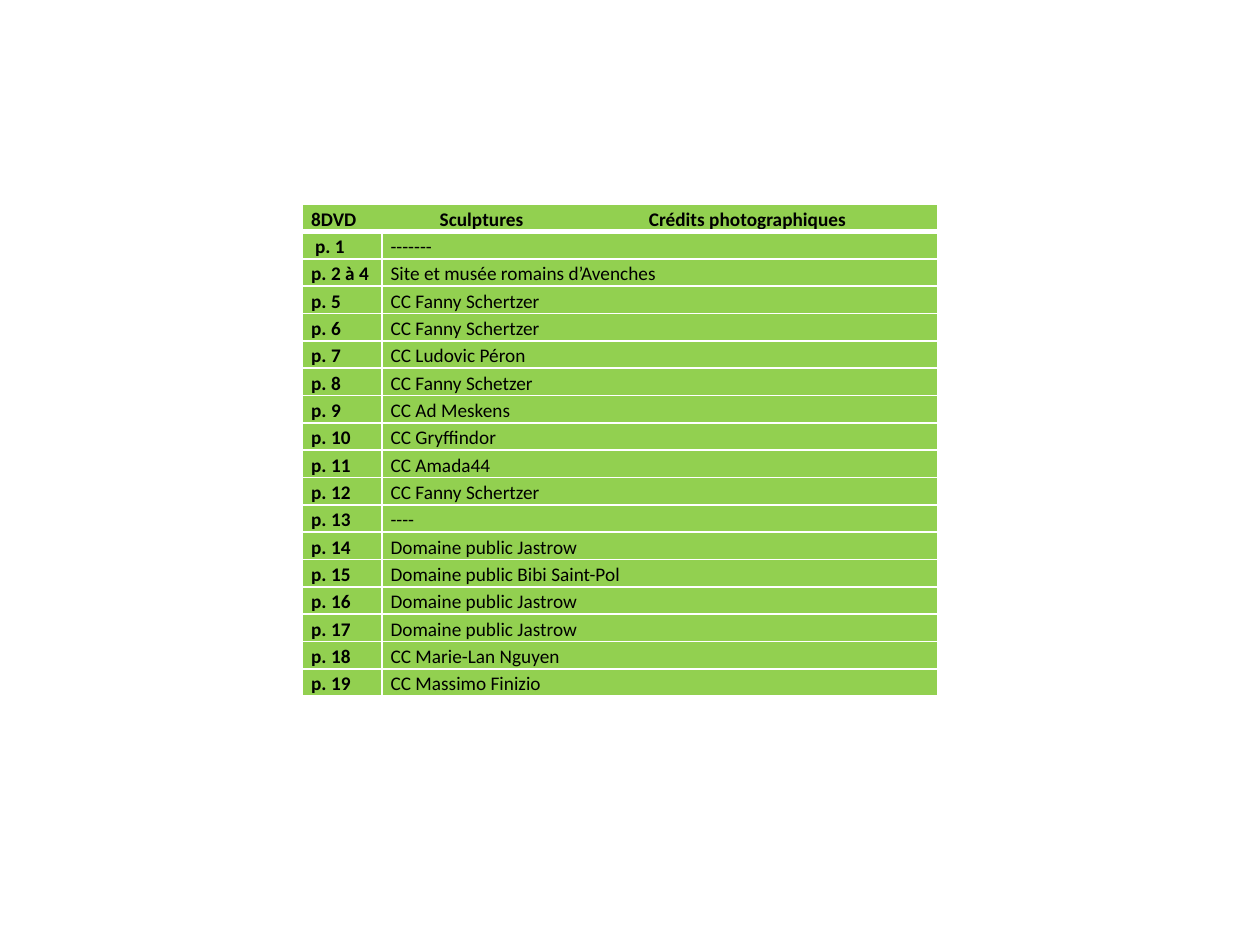
from dataclasses import dataclass

import pptx
import pptx.dml.color
import pptx.oxml
import pptx.oxml.ns
import pptx.util
from pptx.util import Inches


@dataclass(frozen=True)
class Theme:
    font: str = "Calibri"
    size: int = 11
    line_spacing: float = 1.15
    text: str = "000000"
    fill: str = "92D050"
    border: str = "FFFFFF"
    thin: int = 1
    thick: int = 3


THEME = Theme()
HEADER = "8DVD\tSculptures\tCrédits photographiques"
HEADER_TABS = (1.02, 2.68)
CREDITS = [
    ("p. 1", "-------"),
    ("p. 2 à 4", "Site et musée romains d’Avenches"),
    ("p. 5", "CC Fanny Schertzer"),
    ("p. 6", "CC Fanny Schertzer"),
    ("p. 7", "CC Ludovic Péron"),
    ("p. 8", "CC Fanny Schetzer"),
    ("p. 9", "CC Ad Meskens"),
    ("p. 10", "CC Gryffindor"),
    ("p. 11", "CC Amada44"),
    ("p. 12", "CC Fanny Schertzer"),
    ("p. 13", "----"),
    ("p. 14", "Domaine public Jastrow"),
    ("p. 15", "Domaine public Bibi Saint-Pol"),
    ("p. 16", "Domaine public Jastrow"),
    ("p. 17", "Domaine public Jastrow"),
    ("p. 18", "CC Marie-Lan Nguyen"),
    ("p. 19", "CC Massimo Finizio"),
]
COLUMN_WIDTHS = (0.63, 4.41)
ROW_HEIGHT = 0.21


def rgb(value):
    return pptx.dml.color.RGBColor.from_string(value)


def set_borders(cell, top, bottom):
    """Line all four sides of a cell; call before filling it."""
    properties = cell._tc.get_or_add_tcPr()
    widths = {"lnL": THEME.thin, "lnR": THEME.thin, "lnT": top, "lnB": bottom}
    for side, width in widths.items():
        properties.append(pptx.oxml.parse_xml(
            f'<a:{side} {pptx.oxml.ns.nsdecls("a")} w="{pptx.util.Pt(width)}">'
            f'<a:solidFill><a:srgbClr val="{THEME.border}"/></a:solidFill>'
            f'</a:{side}>'))


def style_cell(cell, row):
    set_borders(cell,
                top=THEME.thick if row == 1 else THEME.thin,
                bottom=THEME.thick if row == 0 else THEME.thin)
    cell.fill.solid()
    cell.fill.fore_color.rgb = rgb(THEME.fill)
    margins = {"margin_left": 0.07, "margin_right": 0.07,
               "margin_top": 0, "margin_bottom": 0}
    for name, value in margins.items():
        setattr(cell, name, Inches(value))


def add_tab_stops(para, positions):
    stops = "".join(f'<a:tab pos="{Inches(position)}" algn="l"/>'
                    for position in positions)
    para._p.get_or_add_pPr().append(pptx.oxml.parse_xml(
        f'<a:tabLst {pptx.oxml.ns.nsdecls("a")}>{stops}</a:tabLst>'))


def write_cell(cell, text, bold, tabs=()):
    para = cell.text_frame.paragraphs[0]
    if tabs:
        add_tab_stops(para, tabs)
    para.line_spacing = THEME.line_spacing
    span = para.add_run()
    span.text = text
    formats = {"name": THEME.font, "size": pptx.util.Pt(THEME.size), "bold": bold}
    for name, value in formats.items():
        setattr(span.font, name, value)
    span.font.color.rgb = rgb(THEME.text)


def add_credits_table(page):
    row_count = len(CREDITS) + 1
    table = page.shapes.add_table(
        row_count, len(COLUMN_WIDTHS), Inches(2.4), Inches(1.62),
        Inches(sum(COLUMN_WIDTHS)), Inches(ROW_HEIGHT * row_count)).table
    for column, width in zip(table.columns, COLUMN_WIDTHS):
        column.width = Inches(width)
    for index, row in enumerate(table.rows):
        row.height = Inches(ROW_HEIGHT)
        for cell in row.cells:
            style_cell(cell, index)

    table.cell(0, 0).merge(table.cell(0, 1))
    write_cell(table.cell(0, 0), HEADER, bold=True, tabs=HEADER_TABS)
    for index, (pages, credit) in enumerate(CREDITS, start=1):
        write_cell(table.cell(index, 0), pages, bold=True)
        write_cell(table.cell(index, 1), credit, bold=False)
    table.cell(1, 0).margin_left = Inches(0.1)


def main():
    deck = pptx.Presentation()
    deck.slide_width, deck.slide_height = Inches(10), Inches(7.5)
    page = deck.slides.add_slide(deck.slide_layouts[6])
    add_credits_table(page)
    deck.save("out.pptx")


if __name__ == "__main__":
    main()
